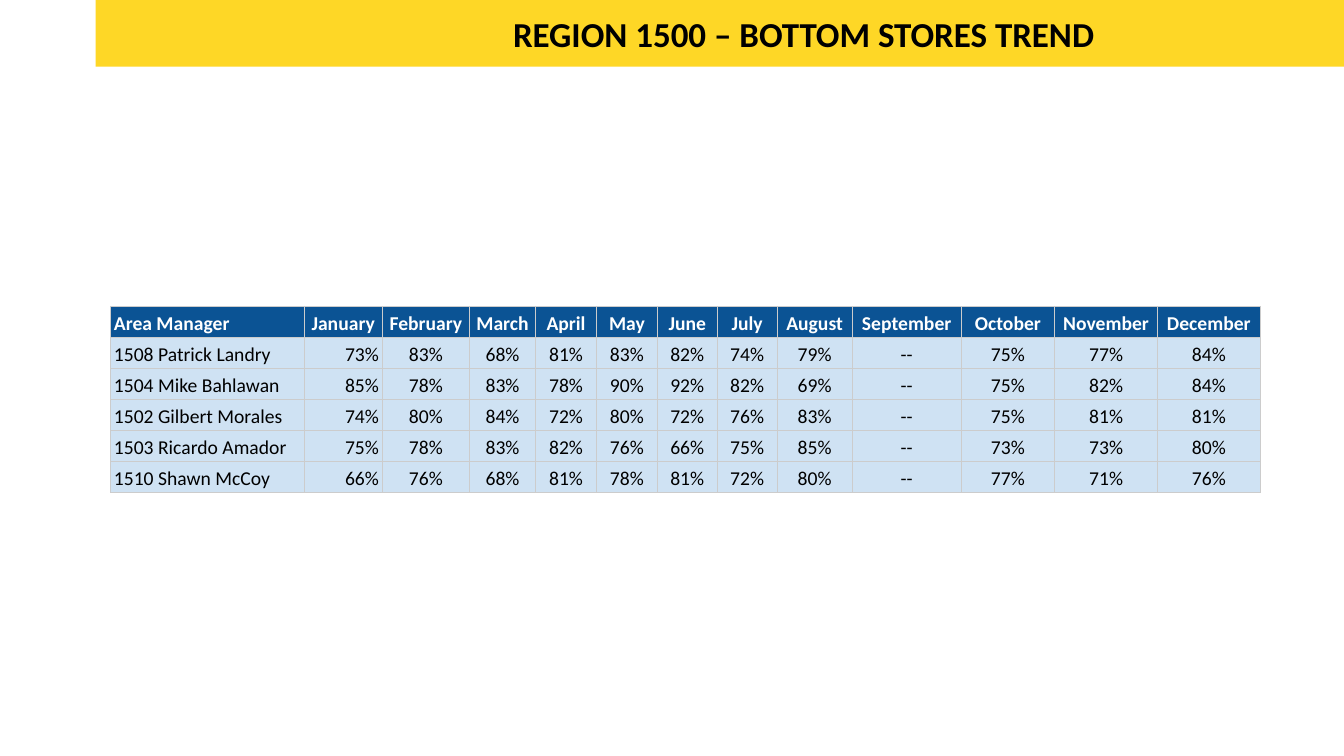
from lxml import etree
from pptx import Presentation
from pptx.dml.color import RGBColor
from pptx.enum.shapes import MSO_SHAPE
from pptx.enum.text import MSO_ANCHOR, PP_ALIGN
from pptx.oxml.ns import qn
from pptx.util import Cm, Pt

RECT = MSO_SHAPE.RECTANGLE
MIDDLE, BOTTOM = MSO_ANCHOR.MIDDLE, MSO_ANCHOR.BOTTOM
LEFT, CENTER, RIGHT = PP_ALIGN.LEFT, PP_ALIGN.CENTER, PP_ALIGN.RIGHT

BLACK = RGBColor(0x00, 0x00, 0x00)
WHITE = RGBColor(0xFF, 0xFF, 0xFF)
YELLOW = RGBColor(0xFE, 0xD7, 0x26)
NAVY = RGBColor(0x0B, 0x53, 0x94)
PALE = RGBColor(0xCF, 0xE2, 0xF3)
GRAY = RGBColor(0xCC, 0xCC, 0xCC)

MONTHS = ["January", "February", "March", "April", "May", "June", "July",
          "August", "September", "October", "November", "December"]
STORES = {
    "1508 Patrick Landry": "73% 83% 68% 81% 83% 82% 74% 79% -- 75% 77% 84%",
    "1504 Mike Bahlawan": "85% 78% 83% 78% 90% 92% 82% 69% -- 75% 82% 84%",
    "1502 Gilbert Morales": "74% 80% 84% 72% 80% 72% 76% 83% -- 75% 81% 81%",
    "1503 Ricardo Amador": "75% 78% 83% 82% 76% 66% 75% 85% -- 73% 73% 80%",
    "1510 Shawn McCoy": "66% 76% 68% 81% 78% 81% 72% 80% -- 77% 71% 76%",
}
WIDTHS = [4.88, 1.96, 2.21, 1.65, 1.55, 1.52, 1.52, 1.5, 1.9, 2.74, 2.36,
          2.59, 2.59]
ROW = 0.71


def apply(item, values):
    for name, value in values.items():
        setattr(item, name, value)


class Page:
    font = "Calibri"
    inset = {"margin_left": Cm(0.08), "margin_right": Cm(0.08),
             "margin_top": Cm(0.05), "margin_bottom": Cm(0.05)}

    def __init__(self, slide):
        self.slide = slide

    def text(self, frame, words, size, color, bold, align):
        para = frame.paragraphs[0]
        para.alignment = align
        run = para.add_run()
        run.text = words
        apply(run.font, {"name": self.font, "size": Pt(size), "bold": bold})
        run.font.color.rgb = color
        return para

    def band(self, box, color):
        shape = self.slide.shapes.add_shape(RECT, *map(Cm, box))
        shape.shadow.inherit = False
        shape.fill.solid()
        shape.fill.fore_color.rgb = color
        shape.line.fill.background()

    def title(self, box, words):
        frame = self.slide.shapes.add_textbox(*map(Cm, box)).text_frame
        apply(frame, {"word_wrap": True, "vertical_anchor": MIDDLE})
        self.text(frame, words, 25, BLACK, True, CENTER)

    def border(self, cell):
        props = cell._tc.get_or_add_tcPr()
        for side in "LRTB":
            line = etree.SubElement(props, qn(f"a:ln{side}"), w=str(Pt(0.75)))
            fill = etree.SubElement(line, qn("a:solidFill"))
            etree.SubElement(fill, qn("a:srgbClr"), val=str(GRAY))

    def cell(self, cell, words, align, head):
        self.border(cell)
        cell.fill.solid()
        cell.fill.fore_color.rgb = NAVY if head else PALE
        apply(cell, {**self.inset, "vertical_anchor": BOTTOM})
        para = self.text(cell.text_frame, words, 14,
                         WHITE if head else BLACK, head, align)
        para.line_spacing = 1.15

    def table(self, left, top, widths, height, rows):
        table = self.slide.shapes.add_table(
            len(rows), len(widths), Cm(left), Cm(top),
            Cm(sum(widths)), Cm(height * len(rows))).table
        table.horz_banding = False
        for col, width in zip(table.columns, widths):
            col.width = Cm(width)
        for r, row in enumerate(rows):
            table.rows[r].height = Cm(height)
            for c, words in enumerate(row):
                head = r == 0
                # Names sit left, January values right, the rest centred
                align = LEFT if c == 0 else CENTER
                if c == 1 and not head:
                    align = RIGHT
                self.cell(table.cell(r, c), words, align, head)


def main():
    deck = Presentation()
    apply(deck, {"slide_width": Cm(33.87), "slide_height": Cm(19.05)})
    page = Page(deck.slides.add_slide(deck.slide_layouts[6]))

    # Title band
    page.band((2.41, 0, 31.46, 1.68), YELLOW)
    page.title((6.63, 0.18, 27.24, 1.32), "REGION 1500 – BOTTOM STORES TREND")

    # Monthly scores
    rows = [["Area Manager", *MONTHS]]
    rows += [[name, *scores.split()] for name, scores in STORES.items()]
    page.table(2.79, 7.72, WIDTHS, ROW, rows)

    deck.save("out.pptx")


if __name__ == "__main__":
    main()
